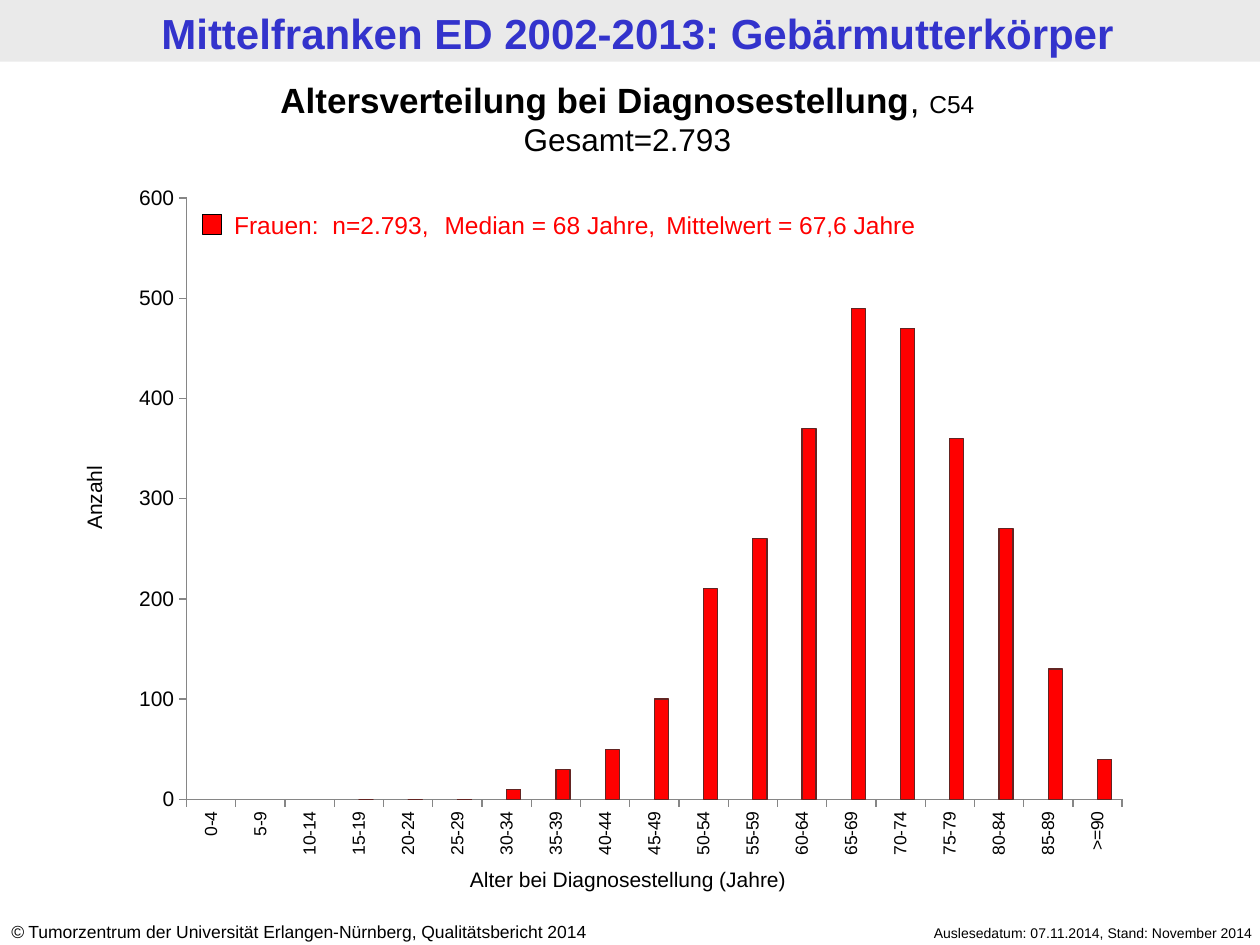
from dataclasses import dataclass

import lxml.etree
import pptx
import pptx.chart.data
import pptx.dml.color
import pptx.enum.chart
import pptx.enum.shapes
import pptx.enum.text
import pptx.oxml
import pptx.oxml.ns
import pptx.util

Inches = pptx.util.Inches
Pt = pptx.util.Pt
qn = pptx.oxml.ns.qn
Align = pptx.enum.text.PP_ALIGN


@dataclass
class Run:
    text: str
    size: float
    bold: bool = False
    italic: bool = False


@dataclass
class Label:
    position: tuple[float, float, float, float]
    lines: list[list[Run]]
    color: str = "000000"
    alignment: Align = Align.CENTER
    rotation: float = 0
    tabs: tuple[float, ...] = ()


TITLE = Label((0.06, 0.01, 10, 0.49),
              [[Run("Mittelfranken ED 2002-2013: Gebärmutterkörper", 24, True)]], "3333CC")
LABELS = [
    Label((6.65, 7.29, 3.39, 0.24),
          [[Run("Auslesedatum: 07.11.2014, Stand: November 2014", 8)]], alignment=Align.RIGHT),
    Label((-0.01, 7.26, 5.24, 0.27),
          [[Run("©", 10, italic=True),
            Run(" Tumorzentrum der Universität Erlangen-Nürnberg, Qualitätsbericht 2014", 10)]],
          alignment=Align.LEFT),
    Label((-0.04, 0.57, 10.04, 0.74),
          [[Run("Altersverteilung bei Diagnosestellung", 20, True), Run(", ", 20), Run("C54", 14)],
           [Run("Gesamt=2.793", 18)]]),
    Label((1.76, 1.62, 6.85, 0.34),
          [[Run("Frauen: \tn=2.793, \tMedian = 68 Jahre,\tMittelwert = 67,6 Jahre", 14)]],
          "FF0000", Align.LEFT, tabs=(0.78, 0.88, 1.67, 3.43)),
    Label((3.45, 6.83, 3.07, 0.3), [[Run("Alter bei Diagnosestellung (Jahre)", 12)]]),
    Label((-0.56, 3.8, 2.61, 0.3), [[Run("Anzahl", 12)]], rotation=270),
]
AGE_GROUPS = [f"{age}-{age + 4}" for age in range(0, 90, 5)] + [">=90"]
MEN = [None] * len(AGE_GROUPS)
WOMEN = [None, None, None, 0, 0, 0, 10, 30, 50, 100, 210, 260, 370, 490, 470, 360, 270, 130, 40]


def rgb(value: str) -> pptx.dml.color.RGBColor:
    return pptx.dml.color.RGBColor.from_string(value)


def format_font(font, run: Run, color: str) -> None:
    font.name = "Arial"
    font.size = Pt(run.size)
    font.bold = run.bold
    font.italic = run.italic
    font.color.rgb = rgb(color)


def fill_text(shape, label: Label) -> None:
    shape.left, shape.top, shape.width, shape.height = map(Inches, label.position)
    shape.rotation = label.rotation
    frame = shape.text_frame
    frame.word_wrap = True
    frame.auto_size = pptx.enum.text.MSO_AUTO_SIZE.NONE
    frame.vertical_anchor = pptx.enum.text.MSO_ANCHOR.TOP
    for index, line in enumerate(label.lines):
        paragraph = frame.add_paragraph() if index else frame.paragraphs[0]
        paragraph.alignment = label.alignment
        if label.tabs:
            properties = paragraph._p.get_or_add_pPr()
            tab_list = lxml.etree.SubElement(properties, qn("a:tabLst"))
            for tab in label.tabs:
                lxml.etree.SubElement(tab_list, qn("a:tab"), pos=str(Inches(tab)), algn="l")
        for item in line:
            run = paragraph.add_run()
            run.text = item.text
            if len(line) > 1:
                format_font(run.font, item, label.color)
        if len(line) == 1:
            format_font(paragraph.font, line[0], label.color)


def add_rectangle(slide, position: tuple[float, float, float, float], fill: str, line: str = ""):
    shape = slide.shapes.add_shape(pptx.enum.shapes.MSO_SHAPE.RECTANGLE, *map(Inches, position))
    shape.shadow.inherit = False
    shape.fill.solid()
    shape.fill.fore_color.rgb = rgb(fill)
    if line:
        shape.line.color.rgb = rgb(line)
        shape.line.width = Pt(0.75)
    else:
        shape.line.fill.background()
    return shape


def format_axis(axis, size: float) -> None:
    axis.has_major_gridlines = False
    axis.major_tick_mark = pptx.enum.chart.XL_TICK_MARK.OUTSIDE
    axis.minor_tick_mark = pptx.enum.chart.XL_TICK_MARK.NONE
    axis.format.line.color.rgb = rgb("868686")
    axis.format.line.width = Pt(0.75)
    format_font(axis.tick_labels.font, Run("", size), "000000")


def set_plot_area(chart, x: float, y: float, width: float, height: float) -> None:
    plot_area = chart._chartSpace.chart.plotArea
    for old_layout in plot_area.findall(qn("c:layout")):
        plot_area.remove(old_layout)
    layout = lxml.etree.Element(qn("c:layout"))
    manual = lxml.etree.SubElement(layout, qn("c:manualLayout"))
    settings = {"layoutTarget": "inner", "xMode": "edge", "yMode": "edge",
                "x": x, "y": y, "w": width, "h": height}
    for name, value in settings.items():
        lxml.etree.SubElement(manual, qn(f"c:{name}"), val=str(value))
    plot_area.insert(0, layout)
    properties = lxml.etree.SubElement(plot_area, qn("c:spPr"))
    fill = lxml.etree.SubElement(properties, qn("a:solidFill"))
    lxml.etree.SubElement(fill, qn("a:srgbClr"), val="FFFFFF")


def add_age_chart(slide) -> None:
    data = pptx.chart.data.CategoryChartData()
    data.categories = AGE_GROUPS
    data.add_series("Series 1", MEN)
    data.add_series("Series 2", WOMEN)
    chart = slide.shapes.add_chart(
        pptx.enum.chart.XL_CHART_TYPE.COLUMN_CLUSTERED,
        *map(Inches, (0.91, 1.35, 8.16, 5.55)), data).chart
    chart.has_legend = False
    chart.has_title = False
    chart.font.name = "Calibri"
    chart.font.size = Pt(18)
    chart.font.color.rgb = rgb("000000")
    plot = chart.plots[0]
    plot.vary_by_categories = False
    plot.gap_width = 150
    plot.overlap = 0
    for series, fill, line in zip(plot.series, ("3366FF", "FF0000"), ("0033CC", "632523")):
        series.invert_if_negative = False
        series.format.fill.solid()
        series.format.fill.fore_color.rgb = rgb(fill)
        series.format.line.color.rgb = rgb(line)
        series.format.line.width = Pt(0.75)
    format_axis(chart.category_axis, 10)
    format_axis(chart.value_axis, 12)
    chart.value_axis.minimum_scale = 0
    chart.value_axis.maximum_scale = 600
    chart.value_axis.major_unit = 100
    body = chart.category_axis._element.find(qn("c:txPr")).find(qn("a:bodyPr"))
    body.set("rot", "-5400000")
    body.set("vert", "horz")
    set_plot_area(chart, 0.07, 0.04, 0.91, 0.86)


def main() -> None:
    presentation = pptx.Presentation()
    presentation.slide_width = Inches(10)
    presentation.slide_height = Inches(7.5)
    slide = presentation.slides.add_slide(presentation.slide_layouts[5])
    title = slide.shapes.title
    band = add_rectangle(slide, (0, 0, 10, 0.49), "EAEAEA")
    title._element.addprevious(band._element)
    fill_text(title, TITLE)
    add_age_chart(slide)
    for label in LABELS:
        fill_text(slide.shapes.add_textbox(*map(Inches, label.position)), label)
    add_rectangle(slide, (1.61, 1.7, 0.15, 0.16), "FF0000", "000000")
    presentation.save("out.pptx")


if __name__ == "__main__":
    main()
